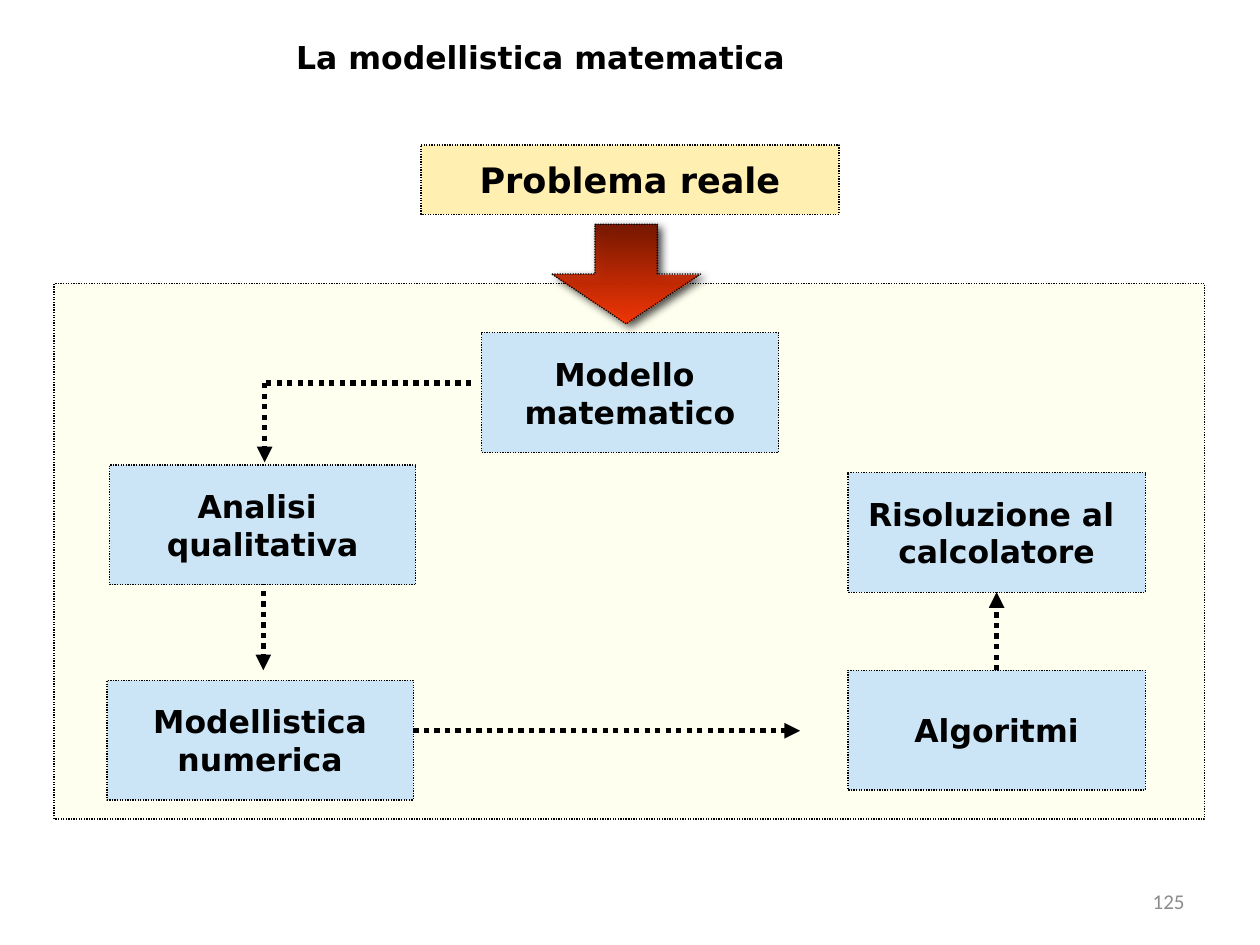
from dataclasses import dataclass

import pptx
import pptx.dml.color
import pptx.enum.dml
import pptx.enum.shapes
import pptx.enum.text
import pptx.oxml
import pptx.oxml.ns
import pptx.util
from pptx.util import Inches

FONT = "DejaVu Sans"
BLACK = "000000"
SHAPE = pptx.enum.shapes.MSO_SHAPE
ALIGN = pptx.enum.text.PP_ALIGN
ANCHOR = pptx.enum.text.MSO_ANCHOR
qn = pptx.oxml.ns.qn
NS = pptx.oxml.ns.nsdecls("a")


@dataclass
class Box:
    left: float
    top: float
    width: float = 2.36
    height: float = 0.95
    text: str = ""
    color: str = "99CCFF"
    alpha: int = 51
    size: int = 18


@dataclass
class Link:
    x1: float
    y1: float
    x2: float
    y2: float
    arrow: bool = True


PANEL = Box(0.43, 2.25, 9.13, 4.25, color="FFFFCC", alpha=29)
PROBLEM = Box(3.34, 1.15, 3.32, 0.55, "Problema reale", "FFCC00", 31, 20)
MODEL = Box(3.82, 2.64, text="Modello \nmatematico")
ANALYSIS = Box(0.87, 3.69, 2.43, text="Analisi \nqualitativa")
NUMERICS = Box(0.85, 5.4, 2.43, text="Modellistica\nnumerica")
ALGORITHMS = Box(6.73, 5.32, text="Algoritmi")
SOLUTION = Box(6.73, 3.75, text="Risoluzione al \ncalcolatore")

LINKS = [
    Link(3.74, 3.04, 2.1, 3.04, arrow=False),
    Link(2.1, 3.04, 2.1, 3.67),
    Link(2.09, 4.69, 2.09, 5.32),
    Link(3.28, 5.8, 6.35, 5.8),
]
ALGORITHMS_TO_SOLUTION = Link(7.91, 5.32, 7.91, 4.7)


def rgb(value: str) -> pptx.dml.color.RGBColor:
    return pptx.dml.color.RGBColor.from_string(value)


def add_alpha(color_element, percent: int) -> None:
    color_element.append(
        pptx.oxml.parse_xml(f'<a:alpha {NS} val="{percent * 1000}"/>'))


def dot_line(line, width: float) -> None:
    line.color.rgb = rgb(BLACK)
    line.width = pptx.util.Pt(width)
    line.dash_style = pptx.enum.dml.MSO_LINE.ROUND_DOT


def write(sp, text: str, size: int, align, anchor, color: str = BLACK,
          font: str = FONT, bold: bool = True) -> None:
    tf = sp.text_frame
    tf.text = text
    tf.word_wrap = False
    tf.vertical_anchor = anchor
    for p in tf.paragraphs:
        p.alignment = align
        for r in p.runs:
            r.font.name = font
            r.font.size = pptx.util.Pt(size)
            r.font.bold = bold
            r.font.color.rgb = rgb(color)


def add_box(s, box: Box):
    sp = s.shapes.add_shape(SHAPE.RECTANGLE, Inches(box.left), Inches(box.top),
                            Inches(box.width), Inches(box.height))
    sp.shadow.inherit = False
    sp.fill.solid()
    sp.fill.fore_color.rgb = rgb(box.color)
    add_alpha(next(sp.element.spPr.iter(qn("a:srgbClr"))), box.alpha)
    dot_line(sp.line, 0.75)
    if box.text:
        write(sp, box.text, box.size, ALIGN.CENTER, ANCHOR.MIDDLE)
    return sp


def add_link(s, link: Link):
    cx = s.shapes.add_connector(
        pptx.enum.shapes.MSO_CONNECTOR.STRAIGHT,
        Inches(link.x1), Inches(link.y1), Inches(link.x2), Inches(link.y2))
    dot_line(cx.line, 3)
    if link.arrow:
        cx.line._get_or_add_ln().append(
            pptx.oxml.parse_xml(f'<a:tailEnd {NS} type="triangle"/>'))
    cx.element.spPr.append(pptx.oxml.parse_xml(f"<a:effectLst {NS}/>"))
    return cx


def add_down_arrow(s) -> None:
    """Add the red gradient arrow, with a soft shadow to the lower right."""
    sp = s.shapes.add_shape(SHAPE.DOWN_ARROW, Inches(4.38), Inches(1.78),
                            Inches(1.18), Inches(0.79))
    sp.adjustments[0] = 0.42
    sp.adjustments[1] = 0.5
    sp.fill.gradient()
    sp.fill.gradient_angle = 270
    for stop, color in zip(sp.fill.gradient_stops, ("761800", "FF3300")):
        stop.color.rgb = rgb(color)
    add_alpha(list(sp.element.spPr.iter(qn("a:srgbClr")))[-1], 91)
    dot_line(sp.line, 0.75)
    sp.element.spPr.append(pptx.oxml.parse_xml(
        f'<a:effectLst {NS}><a:outerShdw blurRad="{pptx.util.Pt(5)}" '
        f'dist="{pptx.util.Pt(3)}" dir="{45 * 60000}" algn="tl" '
        f'rotWithShape="0"><a:srgbClr val="{BLACK}"><a:alpha val="75000"/>'
        '</a:srgbClr></a:outerShdw></a:effectLst>'))


def add_title(s) -> None:
    title = s.shapes.title
    title.left, title.top = Inches(2.25), Inches(0.25)
    title.width, title.height = Inches(5.33), Inches(0.5)
    write(title, "La modellistica matematica", 18, ALIGN.LEFT, ANCHOR.TOP)
    title.text_frame.auto_size = pptx.enum.text.MSO_AUTO_SIZE.NONE


def add_page_number(s) -> None:
    tb = s.shapes.add_textbox(Inches(7.17), Inches(6.95),
                              Inches(2.33), Inches(0.4))
    write(tb, "125", 12, ALIGN.RIGHT, ANCHOR.MIDDLE, "8C8C8C", "Calibri", False)
    tb.text_frame.word_wrap = True


def main() -> None:
    prs = pptx.Presentation()
    prs.slide_width, prs.slide_height = Inches(10), Inches(7.5)
    s = prs.slides.add_slide(prs.slide_layouts.get_by_name("Title Only"))
    add_title(s)
    add_page_number(s)
    for box in (PANEL, PROBLEM):
        add_box(s, box)
    add_down_arrow(s)
    for box in (MODEL, ANALYSIS, NUMERICS):
        add_box(s, box)
    algorithms = add_box(s, ALGORITHMS)
    solution = add_box(s, SOLUTION)
    for link in LINKS:
        add_link(s, link)
    cx = add_link(s, ALGORITHMS_TO_SOLUTION)
    cx.begin_connect(algorithms, 0)
    cx.end_connect(solution, 2)
    prs.save("out.pptx")


if __name__ == "__main__":
    main()
